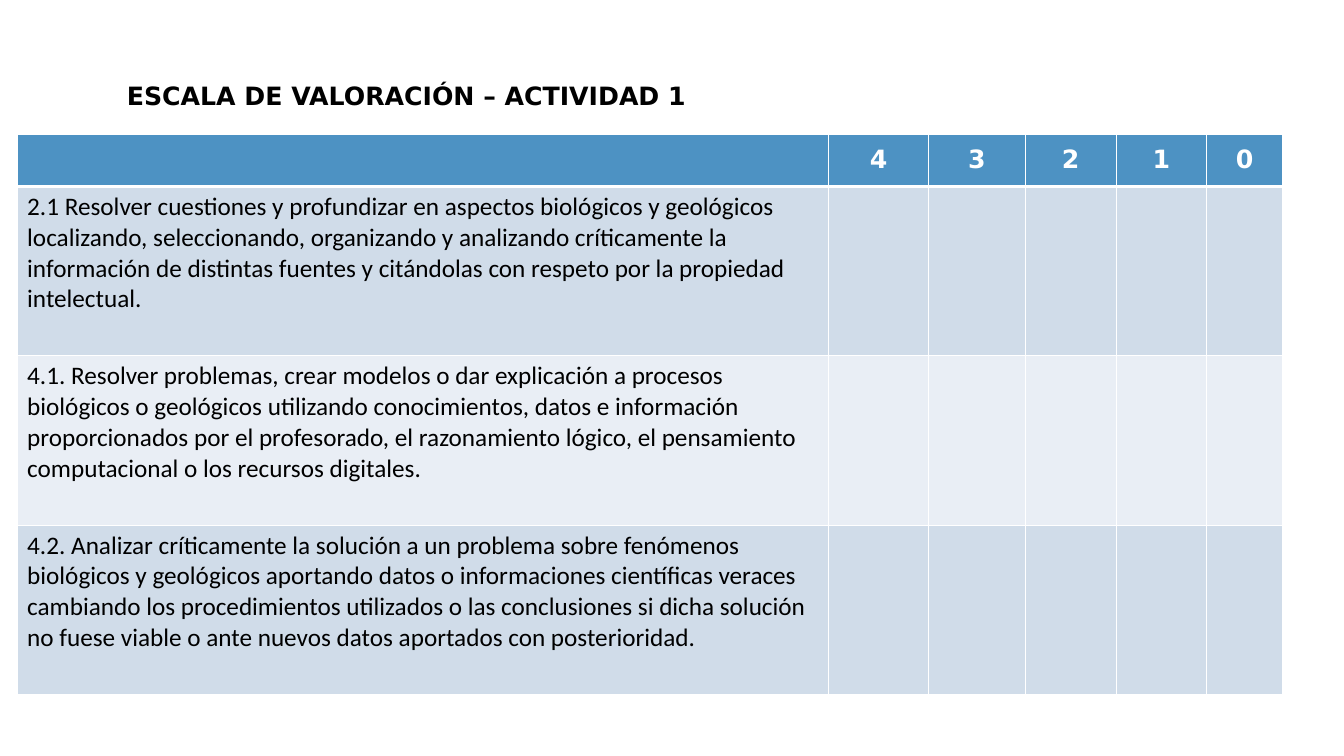
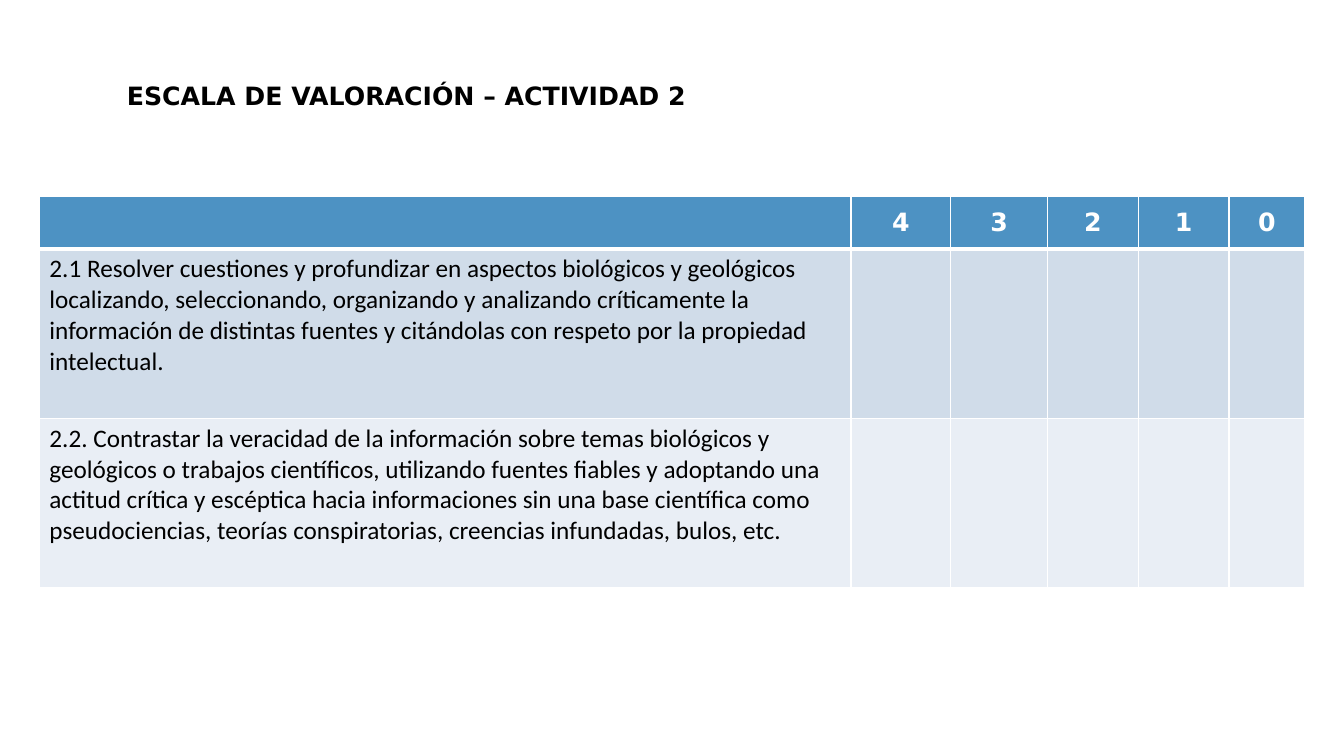
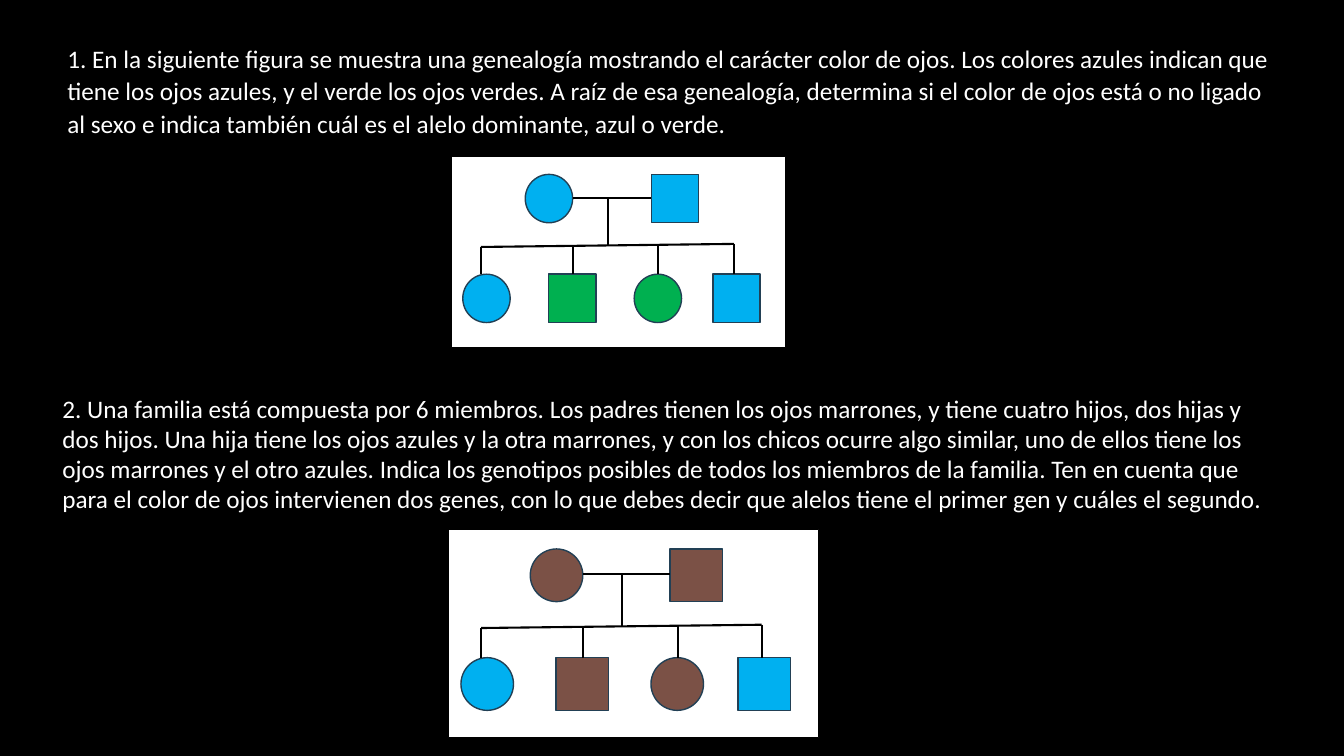
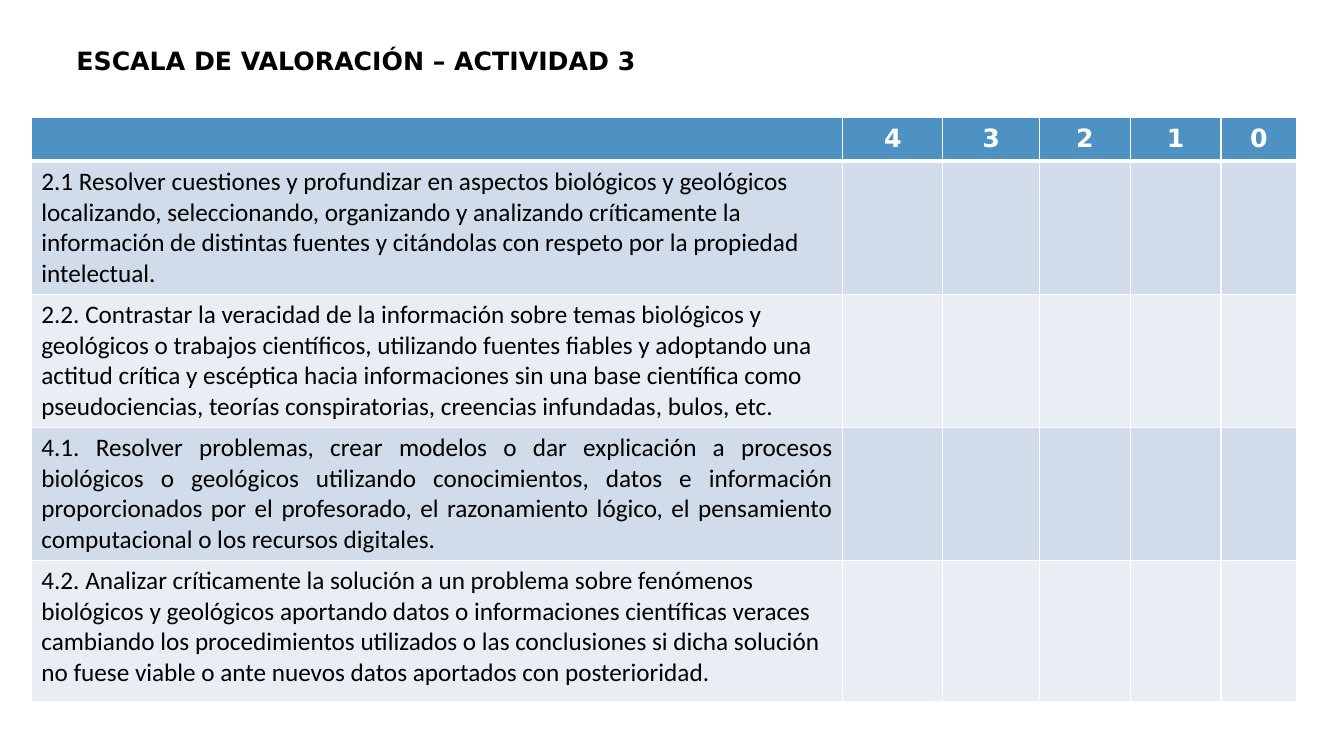
from pptx import Presentation
from pptx.dml.color import RGBColor
from pptx.enum.shapes import MSO_CONNECTOR as Link, MSO_SHAPE as Form
from pptx.enum.text import MSO_ANCHOR as Anchor, PP_ALIGN as Align
from pptx.oxml.ns import qn
from pptx.util import Inches, Pt
from lxml.etree import SubElement as Sub

# Shared look
BLACK, WHITE, EDGE = "000000", "FFFFFF", "224055"
BLUE, GREEN, BROWN = "00B0F0", "00B050", "7B5146"
HEAD, BANDS = "4D92C3", ("D0DCE9", "E9EEF5")
BODY, BOLD = "Calibri", "DejaVu Sans"

# Criteria of the rating scales
CRITERIA = {
    "2.1": "2.1 Resolver cuestiones y profundizar en aspectos biológicos y geológicos localizando, seleccionando, organizando y analizando críticamente la información de distintas fuentes y citándolas con respeto por la propiedad intelectual.",
    "2.2": "2.2. Contrastar la veracidad de la información sobre temas biológicos y geológicos o trabajos científicos, utilizando fuentes fiables y adoptando una actitud crítica y escéptica hacia informaciones sin una base científica como pseudociencias, teorías conspiratorias, creencias infundadas, bulos, etc.",
    "4.1": "4.1. Resolver problemas, crear modelos o dar explicación a procesos biológicos o geológicos utilizando conocimientos, datos e información proporcionados por el profesorado, el razonamiento lógico, el pensamiento computacional o los recursos digitales.",
    "4.2": "4.2. Analizar críticamente la solución a un problema sobre fenómenos biológicos y geológicos aportando datos o informaciones científicas veraces cambiando los procedimientos utilizados o las conclusiones si dicha solución no fuese viable o ante nuevos datos aportados con posterioridad.",
}
MARKS = ("4", "3", "2", "1", "0")
COLS = (8.05, 0.99, 0.96, 0.9, 0.9, 0.75)

# Each scale: activity number, title and table corners, row heights, criteria
SCALES = {
    1: dict(title=(1.16, 0.75), table=(0.17, 1.33),
            rows=(0.52, 1.68, 1.68, 1.68), keys=("2.1", "4.1", "4.2")),
    2: dict(title=(1.16, 0.75), table=(0.39, 1.95),
            rows=(0.52, 1.68, 1.68), keys=("2.1", "2.2")),
    3: dict(title=(0.66, 0.4), table=(0.31, 1.16),
            rows=(0.44, 1.32, 1.32, 1.32, 1.4),
            keys=("2.1", "2.2", "4.1", "4.2"), full="4.1"),
}

# Each task: text, its box and spacing, family tree box, colours (parents, children)
TASKS = [
    dict(text="1. En la siguiente figura se muestra una genealogía mostrando el carácter color de ojos. Los colores azules indican que tiene los ojos azules, y el verde los ojos verdes. A raíz de esa genealogía, determina si el color de ojos está o no ligado al sexo e indica también cuál es el alelo dominante, azul o verde.",
         box=(0.57, 0.36, 12.2, 1.06), gaps=dict(lead=1.07, after=8),
         tree=(4.48, 1.55, 3.31, 1.9),
         eyes=(BLUE, BLUE, BLUE, GREEN, GREEN, BLUE)),
    dict(text="2. Una familia está compuesta por 6 miembros. Los padres tienen los ojos marrones, y tiene cuatro hijos, dos hijas y dos hijos. Una hija tiene los ojos azules y la otra marrones, y con los chicos ocurre algo similar, uno de ellos tiene los ojos marrones y el otro azules. Indica los genotipos posibles de todos los miembros de la familia. Ten en cuenta que para el color de ojos intervienen dos genes, con lo que debes decir que alelos tiene el primer gen y cuáles el segundo.",
         box=(0.52, 3.85, 12.2, 1.31), gaps={},
         tree=(4.45, 5.25, 3.67, 2.07),
         eyes=(BROWN, BROWN, BLUE, BROWN, BROWN, BLUE)),
]

# Family tree plan, in inches on a card of the given size
CARD = (3.31, 1.9)
SIZE = (0.47, 0.48)
OVAL, RECT = Form.OVAL, Form.RECTANGLE
PEOPLE = [(OVAL, 0.73, 0.18), (RECT, 1.98, 0.18), (OVAL, 0.11, 1.17),
          (RECT, 0.96, 1.17), (OVAL, 1.81, 1.17), (RECT, 2.59, 1.17)]
DROPS = (0.29, 1.2, 2.05, 2.8)
BAR = (0.9, 0.87)  # left and right height of the sloping bar


def color(code):
    return RGBColor.from_string(code)


def write(frame, text, font=BODY, ink=BLACK, bold=False, align=Align.LEFT,
          lead=None, after=None):
    frame.word_wrap = True
    para = frame.paragraphs[0]
    para.alignment = align
    if lead:
        para.line_spacing = lead
    if after:
        para.space_after = Pt(after)
    run = para.add_run()
    run.text = text
    run.font.name, run.font.size, run.font.bold = font, Pt(18), bold
    run.font.color.rgb = color(ink)


def add_text(slide, box, text, **style):
    area = slide.shapes.add_textbox(*map(Inches, box))
    write(area.text_frame, text, **style)


def add_page(back):
    slide = deck.slides.add_slide(deck.slide_layouts[6])
    slide.background.fill.solid()
    slide.background.fill.fore_color.rgb = color(back)
    return slide


def paint(cell, fill, top=1, base=1):
    props = cell._tc.get_or_add_tcPr()
    for side, width in zip("LRTB", (1, 1, top, base)):
        line = Sub(props, qn(f"a:ln{side}"), w=str(Pt(width)))
        Sub(Sub(line, qn("a:solidFill")), qn("a:srgbClr"), val=WHITE)
    cell.fill.solid()
    cell.fill.fore_color.rgb = color(fill)


def add_scale(number, title, table, rows, keys, full=None):
    slide = add_page(WHITE)
    add_text(slide, (*title, 6, 0.4), f"ESCALA DE VALORACIÓN – ACTIVIDAD {number}",
             font=BOLD, bold=True)
    size = (sum(COLS), sum(rows))
    grid = slide.shapes.add_table(len(rows), len(COLS),
                                  *map(Inches, (*table, *size))).table
    grid.horz_banding = False
    for col, width in zip(grid.columns, COLS):
        col.width = Inches(width)
    for row, height in zip(grid.rows, rows):
        row.height = Inches(height)
    # Header
    for cell in grid.rows[0].cells:
        paint(cell, HEAD, base=3)
        cell.vertical_anchor = Anchor.MIDDLE
    for i, mark in enumerate(MARKS, 1):
        write(grid.cell(0, i).text_frame, mark, font=BOLD, ink=WHITE,
              bold=True, align=Align.CENTER)
    # Criteria
    for i, key in enumerate(keys, 1):
        for cell in grid.rows[i].cells:
            paint(cell, BANDS[(i - 1) % 2], top=3 if i == 1 else 1)
        write(grid.cell(i, 0).text_frame, CRITERIA[key],
              align=Align.JUSTIFY if key == full else Align.LEFT)


def add_tree(slide, box, eyes):
    left, top, wide, high = box
    sx, sy = wide / CARD[0], high / CARD[1]
    group = slide.shapes.add_group_shape().shapes

    def spot(x, y):
        return Inches(left + x * sx), Inches(top + y * sy)

    def shape(form, x, y, w, h, fill, edge, width):
        item = group.add_shape(form, *spot(x, y), Inches(w * sx), Inches(h * sy))
        item.shadow.inherit = False
        item.fill.solid()
        item.fill.fore_color.rgb = color(fill)
        item.line.color.rgb = color(edge)
        item.line.width = Pt(width)

    def line(x1, y1, x2, y2):
        item = group.add_connector(Link.STRAIGHT, *spot(x1, y1), *spot(x2, y2))
        item.line.color.rgb = color(BLACK)
        item.line.width = Pt(1.5)
        Sub(item._element.spPr, qn("a:effectLst"))

    def bar(x):
        part = (x - DROPS[0]) / (DROPS[-1] - DROPS[0])
        return BAR[0] + part * (BAR[1] - BAR[0])

    shape(RECT, 0, 0, *CARD, WHITE, BLACK, 0.75)
    for (form, x, y), eye in zip(PEOPLE, eyes):
        shape(form, x, y, *SIZE, eye, EDGE, 1)
    # Couple, stem, bar and drops
    line(1.2, 0.41, 1.98, 0.41)
    line(1.55, 0.41, 1.55, bar(1.55))
    line(DROPS[0], BAR[0], DROPS[-1], BAR[1])
    for x in DROPS:
        line(x, bar(x), x, 1.17)


def add_tasks():
    slide = add_page(BLACK)
    for task in TASKS:
        add_text(slide, task["box"], task["text"], ink=WHITE, **task["gaps"])
        add_tree(slide, task["tree"], task["eyes"])


deck = Presentation()
deck.slide_width, deck.slide_height = Inches(13.33), Inches(7.5)
add_scale(1, **SCALES[1])
add_scale(2, **SCALES[2])
add_tasks()
add_scale(3, **SCALES[3])
deck.save("out.pptx")
